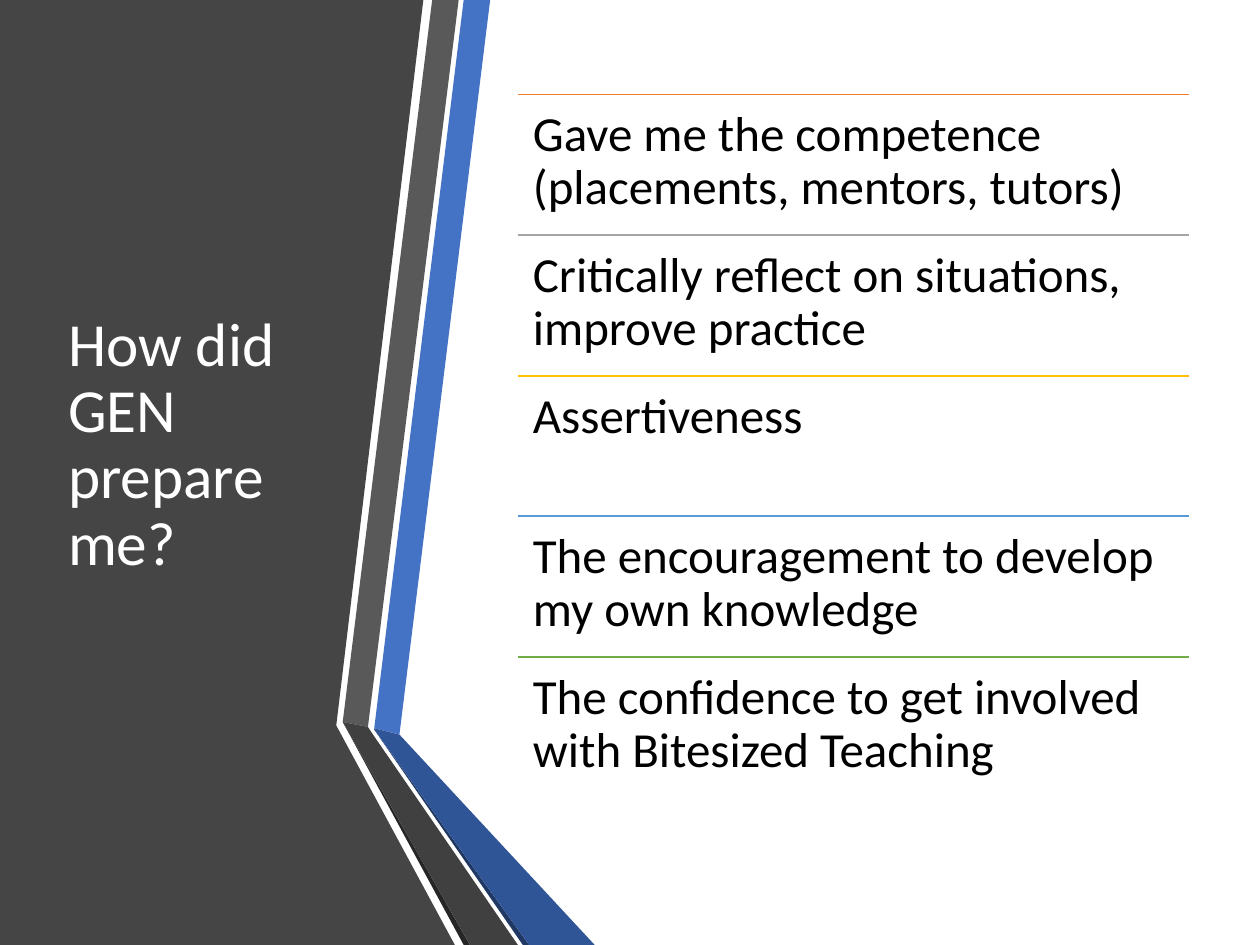
from dataclasses import dataclass
from lxml.etree import SubElement
from pptx import Presentation
from pptx.dml.color import RGBColor as Rgb
from pptx.enum.shapes import MSO_CONNECTOR as Link
from pptx.enum.text import MSO_ANCHOR as Anchor, MSO_AUTO_SIZE as Fit, PP_ALIGN as Align
from pptx.oxml.ns import qn
from pptx.util import Inches, Pt

WIDE, HIGH = 10, 7.5


@dataclass(frozen=True)
class Theme:
    """Colours and type sizes of the slide."""
    font: str = "Calibri"
    head: int = 35
    body: int = 28
    rule: int = 1
    light: str = "FFFFFF"
    ink: str = "000000"
    panel: str = "454545"
    blue: tuple = ("4472C4", "2F5597", "203864")
    grey: tuple = ("595959", "404040", "262626")


THEME = Theme()
PANEL = [(2.64, 0), (3.36, 0), (2.67, 5.75), (2.67, 5.76), (3.61, HIGH), (0, HIGH), (0, 0)]
BANDS = [
    (THEME.blue[0], [(2.97, 5.78), (3.17, 5.83), (3.89, 0), (3.68, 0)]),
    (THEME.grey[0], [(3.64, 0), (3.43, 0), (2.72, 5.73), (2.92, 5.77)]),
    (THEME.grey[2], [(2.72, 5.73), (3.68, HIGH), (3.73, HIGH)]),
    (THEME.blue[2], [(2.97, 5.79), (4.15, HIGH), (4.2, HIGH)]),
    (THEME.blue[1], [(2.97, 5.79), (4.2, HIGH), (4.72, HIGH), (3.17, 5.83), (2.97, 5.78)]),
    (THEME.grey[1], [(4.11, HIGH), (2.96, 5.83), (2.92, 5.77), (2.72, 5.73), (3.73, HIGH)]),
]
ROWS = [
    ("ED7D31", "Gave me the competence (placements, mentors, tutors)"),
    ("A5A5A5", "Critically reflect on situations, improve practice"),
    ("FFC000", "Assertiveness"),
    ("5B9BD5", "The encouragement to develop my own knowledge"),
    ("70AD47", "The confidence to get involved with Bitesized Teaching"),
]
LEFT, TOP, SPAN, TALL = 4.11, HIGH / 10, 5.33, 5.58
STEP = TALL / len(ROWS)


def put(item, **vals):
    """Set each named attribute on the item."""
    for name, val in vals.items():
        setattr(item, name, val)


def write(shape, text, size, tint, pad, anchor):
    """Fill a shape with one left-aligned paragraph."""
    frame = shape.text_frame
    frame.text = text
    sides = ("left", "right", "top", "bottom")
    put(frame, word_wrap=True, auto_size=Fit.NONE, vertical_anchor=anchor,
        **{f"margin_{side}": Inches(pad) for side in sides})
    para = frame.paragraphs[0]
    put(para, alignment=Align.LEFT, line_spacing=0.9)
    font = para.runs[0].font
    put(font, name=THEME.font, size=Pt(size))
    font.color.rgb = Rgb.from_string(tint)


def facet(shapes, tint, points):
    """Draw a closed outline with a plain fill."""
    dots = [(Inches(x), Inches(y)) for x, y in points]
    pen = shapes.build_freeform(*dots[0])
    pen.add_line_segments(dots[1:], close=True)
    shape = pen.convert_to_shape()
    shape.shadow.inherit = False
    shape.fill.solid()
    shape.fill.fore_color.rgb = Rgb.from_string(tint)
    shape.line.fill.background()


def rule(shapes, top, tint):
    """Draw a thin line across the list."""
    line = shapes.add_connector(
        Link.STRAIGHT, *map(Inches, (LEFT, top, LEFT + SPAN, top)))
    line.line.width = Pt(THEME.rule)
    line.line.color.rgb = Rgb.from_string(tint)
    SubElement(line._element.spPr, qn("a:effectLst"))


def entry(shapes, row, tint, text):
    """Add one ruled row of the list."""
    top = TOP + row * STEP
    rule(shapes, top, tint)
    box = shapes.add_textbox(*map(Inches, (LEFT, top, SPAN, STEP)))
    write(box, text, THEME.body, THEME.ink, 0.12, Anchor.TOP)


def head(shapes, text):
    """Place the title on top of the dark panel."""
    title = shapes.title
    put(title, left=Inches(0.44), top=Inches(TOP), width=Inches(2.28), height=Inches(TALL))
    write(title, text, THEME.head, THEME.light, 0.1, Anchor.MIDDLE)
    shapes._spTree.append(title._element)


def main():
    """Build and save the slide."""
    deck = Presentation()
    put(deck, slide_width=Inches(WIDE), slide_height=Inches(HIGH))
    slide = deck.slides.add_slide(deck.slide_layouts[5])
    back = slide.background.fill
    back.solid()
    back.fore_color.rgb = Rgb.from_string(THEME.light)
    shapes = slide.shapes
    facet(shapes, THEME.panel, PANEL)
    folds = shapes.add_group_shape().shapes
    for tint, points in BANDS:
        facet(folds, tint, points)
    head(shapes, "How did GEN prepare me?")
    rows = shapes.add_group_shape().shapes
    for row, (tint, text) in enumerate(ROWS):
        entry(rows, row, tint, text)
    deck.save("out.pptx")


if __name__ == "__main__":
    main()
